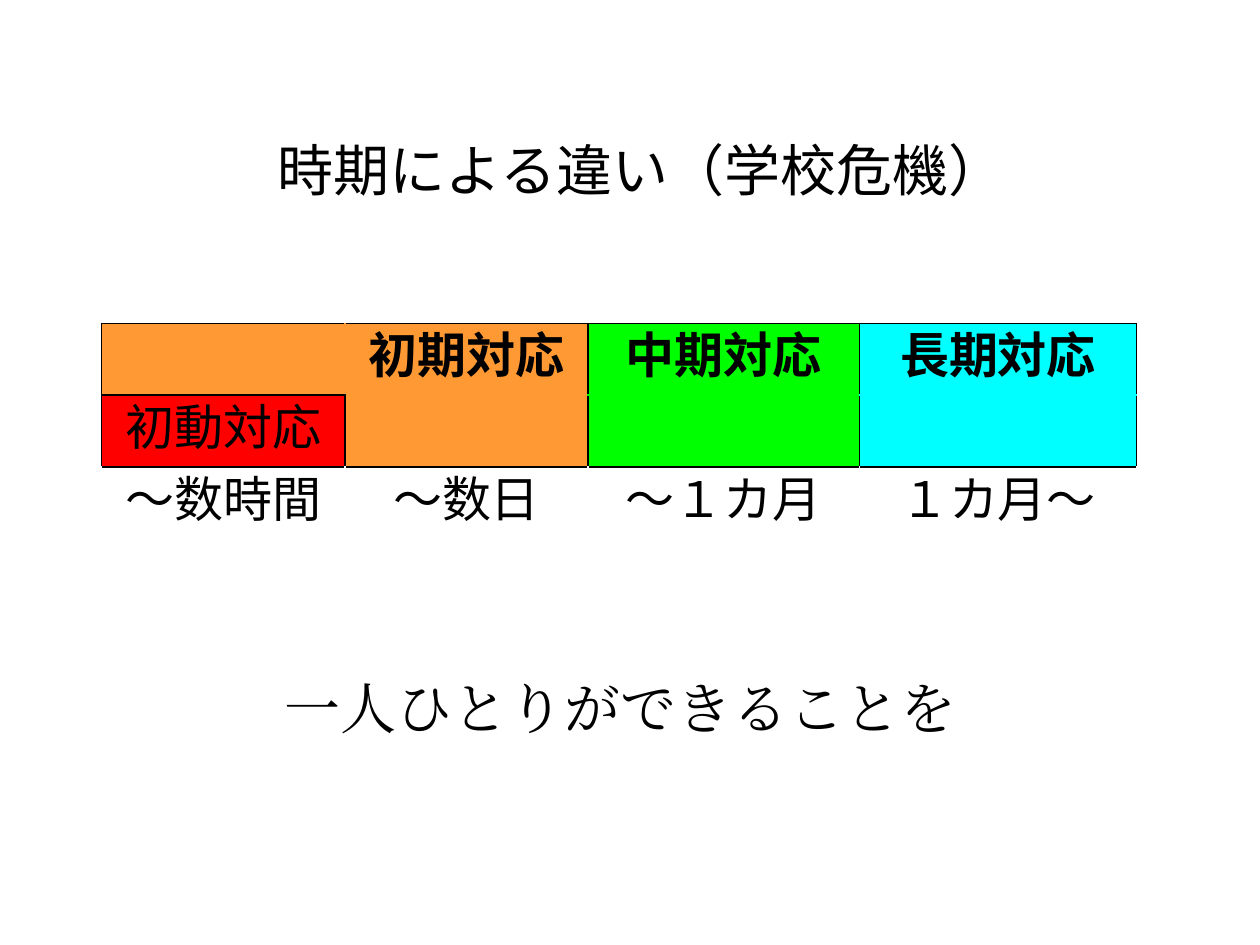
"""Build a slide on the phases of response to a school crisis."""
from lxml import etree
from pptx import Presentation
from pptx.dml.color import RGBColor
from pptx.enum import text
from pptx.oxml import ns
from pptx.util import Pt

HUES = {"black": "000000", "white": "FFFFFF", "orange": "FF9933",
        "red": "FF0000", "green": "00FF00", "cyan": "00FFFF"}


def write(frame, words, size, face, bold=False):
    frame.text = words
    para = frame.paragraphs[0]
    para.alignment = text.PP_ALIGN.CENTER
    for run in para.runs:
        run.font.size = Pt(size)
        run.font.bold = bold
        run.font.color.rgb = RGBColor.from_string(HUES["black"])
        run.font.name = face
        props = run.font._element
        etree.SubElement(props, ns.qn("a:ea"), typeface=face)


def edge(props, side, hue):
    line = etree.SubElement(props, ns.qn("a:" + side), w=str(Pt(1)))
    fill = etree.SubElement(line, ns.qn("a:solidFill"))
    etree.SubElement(fill, ns.qn("a:srgbClr"), val=HUES[hue])


deck = Presentation()
deck.slide_width, deck.slide_height = Pt(720), Pt(540)
slide = deck.slides.add_slide(deck.slide_layouts[6])

labels = [
    ("時期による違い（学校危機）", 42.5, 71.3, 648, 51, "Arial", 7.2, 3.6),
    ("一人ひとりができることを", 82.8, 382.3, 544.3, 44, "Times New Roman", 2.9, 2.9),
]
for words, left, top, wide, high, face, side, rim in labels:
    box = slide.shapes.add_textbox(Pt(left), Pt(top), Pt(wide), Pt(high))
    frame = box.text_frame
    frame.word_wrap = True
    frame.vertical_anchor = text.MSO_ANCHOR.MIDDLE
    frame.margin_left = frame.margin_right = Pt(side)
    frame.margin_top = frame.margin_bottom = Pt(rim)
    write(frame, words, 32, face)

rows = [
    ["", "初期対応", "中期対応", "長期対応"],
    ["初動対応", "", "", ""],
    ["～数時間", "～数日", "～１カ月", "１カ月～"],
]
fills = [
    ["orange", "orange", "green", "cyan"],
    ["red", "orange", "green", "cyan"],
    ["white"] * 4,
]
tints = {(r, c): hue for r, row in enumerate(fills) for c, hue in enumerate(row)}
sides = {"lnL": (0, -1), "lnR": (0, 1), "lnT": (-1, 0), "lnB": (1, 0)}
wides = [139, 139, 155, 158.4]
high = 41

grid = slide.shapes.add_table(3, 4, Pt(58.1), Pt(184.8), Pt(sum(wides)), Pt(3 * high)).table
grid.first_row = grid.horz_banding = False
for col, wide in zip(grid.columns, wides):
    col.width = Pt(wide)
for row in grid.rows:
    row.height = Pt(high)
for (r, c), hue in tints.items():
    cell = grid.cell(r, c)
    props = cell._tc.get_or_add_tcPr()
    for side, (down, right) in sides.items():
        near = tints.get((r + down, c + right), "white")
        edge(props, side, hue if near == hue else "black")
    cell.fill.solid()
    cell.fill.fore_color.rgb = RGBColor.from_string(HUES[hue])
    write(cell.text_frame, rows[r][c], 28, "Arial", r == 0)

deck.save("out.pptx")
